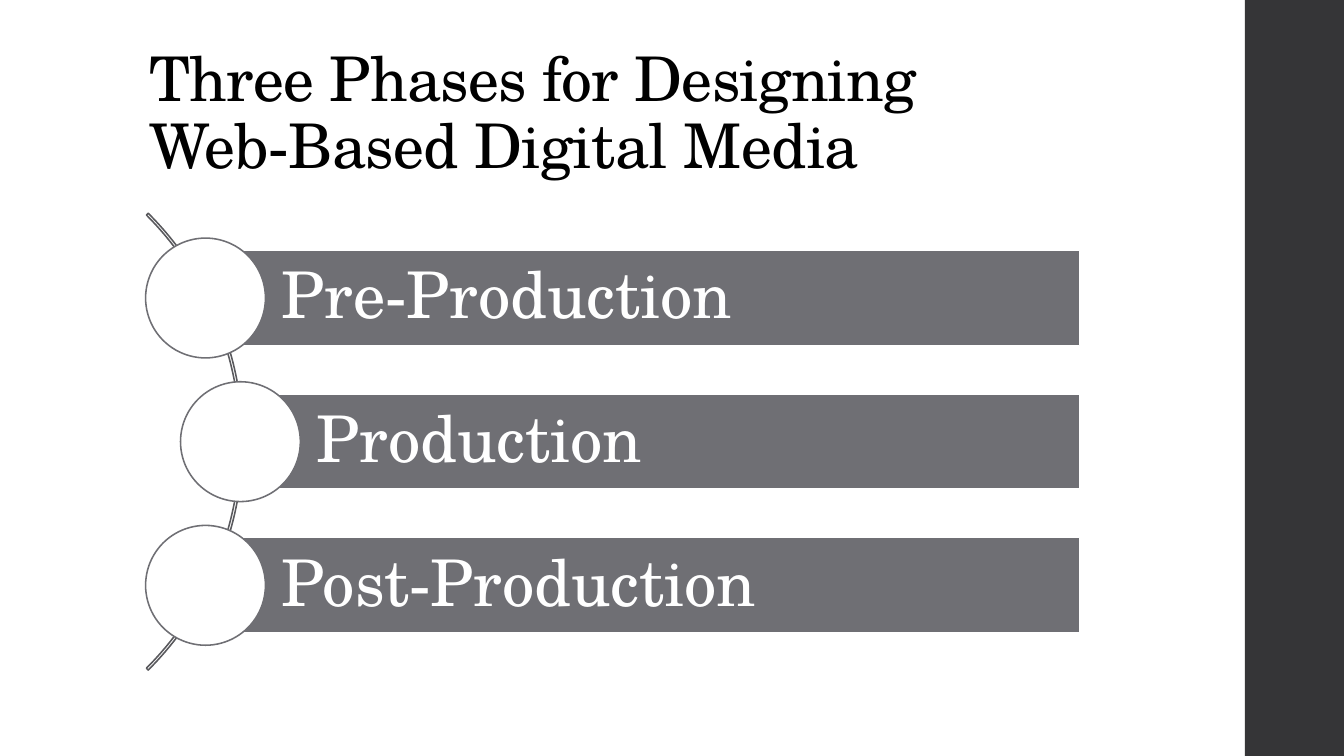
"""Build a slide listing the three phases of designing web-based digital media."""
from dataclasses import dataclass

import pptx
import pptx.dml.color
import pptx.enum.shapes
import pptx.enum.text
import pptx.util
from pptx.util import Cm

RGBColor = pptx.dml.color.RGBColor
Shape = pptx.enum.shapes.MSO_SHAPE
Anchor = pptx.enum.text.MSO_ANCHOR

BLACK = RGBColor(0x00, 0x00, 0x00)
WHITE = RGBColor(0xFF, 0xFF, 0xFF)
GREY = RGBColor(0x6F, 0x6F, 0x74)
ARC_GREY = RGBColor(0x59, 0x59, 0x5D)
SIDEBAR_GREY = RGBColor(0x35, 0x35, 0x37)

FONT = "TeX Gyre Schola"
SLIDE_WIDTH, SLIDE_HEIGHT = Cm(33.87), Cm(19.05)
SIDEBAR_LEFT, SIDEBAR_WIDTH = Cm(31.37), Cm(2.54)
FIRST_CENTER, PHASE_STEP = Cm(7.51), Cm(3.62)
BAR_RIGHT, BAR_HEIGHT = Cm(27.21), Cm(2.4)
CIRCLE_SIZE = Cm(3.02)
ARC_LEFT, ARC_SIZE = Cm(-10.16), Cm(16.28)


@dataclass(frozen=True)
class Phase:
    """A phase name and the horizontal centre of its circle."""

    name: str
    center: int


PHASES = (
    Phase("Pre-Production", Cm(5.18)),
    Phase("Production", Cm(6.06)),
    Phase("Post-Production", Cm(5.18)),
)


def add_outline(slide, kind, left: int, top: int, width: int, height: int,
                fill: RGBColor | None = None, line: RGBColor | None = None):
    """Add a preset shape without shadow and with optional fill and line."""
    shape = slide.shapes.add_shape(kind, left, top, width, height)
    shape.shadow.inherit = False
    if fill is None:
        shape.fill.background()
    else:
        shape.fill.solid()
        shape.fill.fore_color.rgb = fill
    if line is None:
        shape.line.fill.background()
    else:
        shape.line.color.rgb = line
        shape.line.width = pptx.util.Pt(1.1)
    return shape


def write_text(shape, text: str, *, size: float, color: RGBColor, anchor,
               margins: tuple[int, int, int, int], tracking: int = 0) -> None:
    """Write left-aligned text, with a line break at each newline."""
    frame = shape.text_frame
    frame.word_wrap = True
    frame.vertical_anchor = anchor
    (frame.margin_left, frame.margin_top,
     frame.margin_right, frame.margin_bottom) = margins
    paragraph = frame.paragraphs[0]
    paragraph.alignment = pptx.enum.text.PP_ALIGN.LEFT
    paragraph.line_spacing = 0.9
    for index, line in enumerate(text.split("\n")):
        if index:
            paragraph.add_line_break()
        run = paragraph.add_run()
        run.text = line
        run.font.name = FONT
        run.font.size = pptx.util.Pt(size)
        run.font.color.rgb = color
        if tracking:
            run._r.get_or_add_rPr().set("spc", str(tracking))


def add_title(slide) -> None:
    """Add the slide title."""
    title = slide.shapes.add_textbox(Cm(3.51), Cm(1.02), Cm(26.92), Cm(3.68))
    write_text(title, "Three Phases for Designing \nWeb-Based Digital Media",
               size=44, color=BLACK, anchor=Anchor.BOTTOM, tracking=-50,
               margins=(Cm(0.25), Cm(0.13), Cm(0.25), Cm(0.13)))


def add_arc(slide) -> None:
    """Add the thin arc that links the circles, centred on the middle phase."""
    top = FIRST_CENTER + PHASE_STEP - ARC_SIZE // 2
    arc = add_outline(slide, Shape.BLOCK_ARC, ARC_LEFT, top, ARC_SIZE, ARC_SIZE,
                      line=ARC_GREY)
    for index, value in enumerate((189, 27, 0.004)):
        arc.adjustments[index] = value


def add_phase(slide, phase: Phase, middle: int) -> None:
    """Add a phase bar with its circle around the given vertical middle."""
    bar = add_outline(slide, Shape.RECTANGLE, phase.center, middle - BAR_HEIGHT // 2,
                      BAR_RIGHT - phase.center, BAR_HEIGHT, GREY, WHITE)
    write_text(bar, phase.name, size=46, color=WHITE, anchor=Anchor.MIDDLE,
               margins=(Cm(1.92), Cm(0.33), Cm(0.33), Cm(0.33)))
    radius = CIRCLE_SIZE // 2
    add_outline(slide, Shape.OVAL, phase.center - radius, middle - radius,
                CIRCLE_SIZE, CIRCLE_SIZE, WHITE, GREY)


def main() -> None:
    """Build and save the presentation."""
    presentation = pptx.Presentation()
    presentation.slide_width = SLIDE_WIDTH
    presentation.slide_height = SLIDE_HEIGHT
    slide = presentation.slides.add_slide(presentation.slide_layouts[6])
    slide.background.fill.solid()
    slide.background.fill.fore_color.rgb = WHITE
    add_outline(slide, Shape.RECTANGLE, SIDEBAR_LEFT, 0, SIDEBAR_WIDTH, SLIDE_HEIGHT,
                SIDEBAR_GREY)
    add_title(slide)
    add_arc(slide)
    for index, phase in enumerate(PHASES):
        add_phase(slide, phase, FIRST_CENTER + index * PHASE_STEP)
    presentation.save("out.pptx")


if __name__ == "__main__":
    main()
